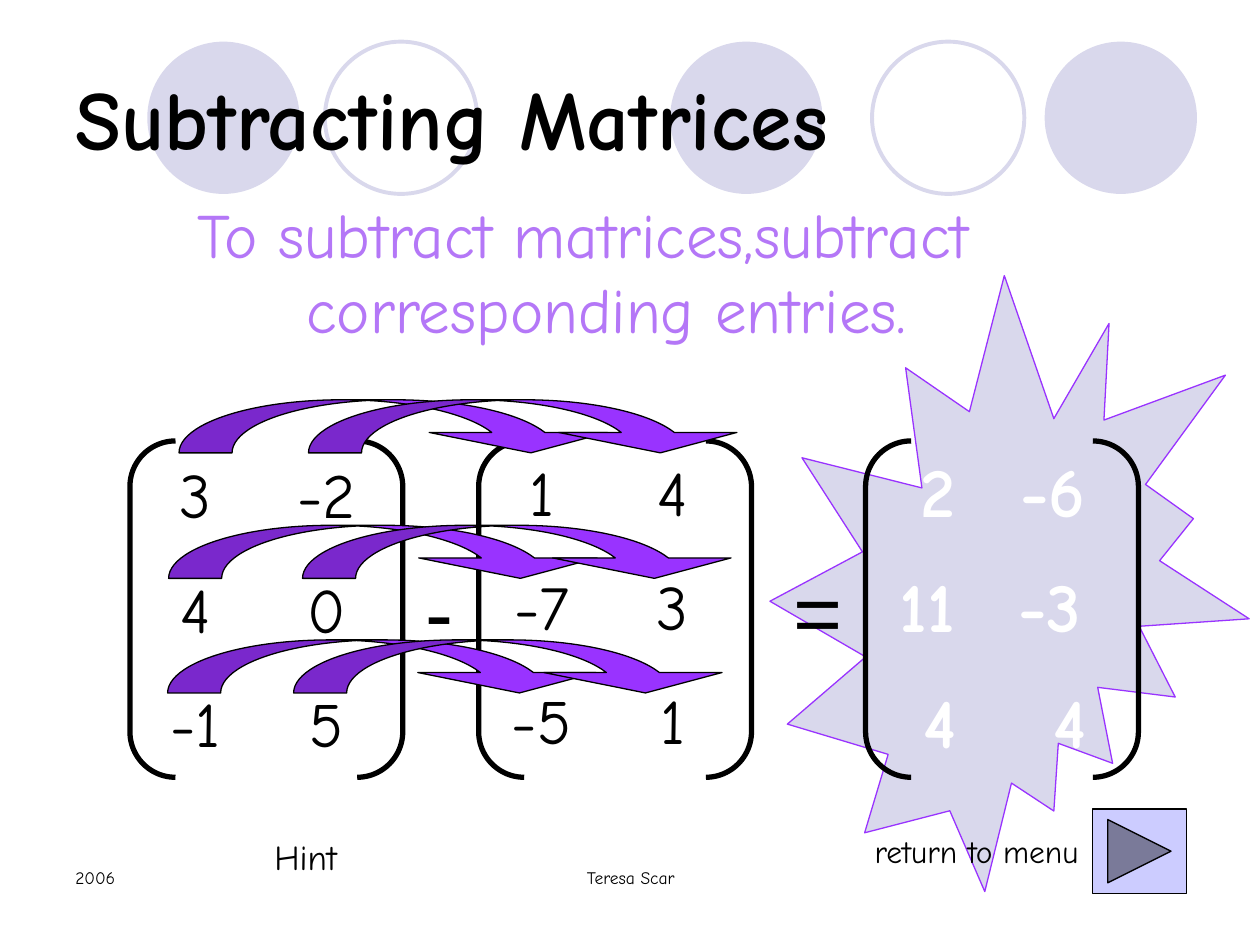
from lxml.etree import SubElement
from pptx import Presentation
from pptx.dml.color import RGBColor
from pptx.enum.shapes import MSO_SHAPE
from pptx.enum.text import MSO_ANCHOR, MSO_AUTO_SIZE, PP_ALIGN
from pptx.oxml.ns import qn
from pptx.util import Cm, Pt

BLACK = RGBColor(0, 0, 0)
WHITE = RGBColor(0xFF, 0xFF, 0xFF)
PALE = RGBColor(0xD9, 0xD8, 0xEC)
PURPLE = RGBColor(0x99, 0x33, 0xFF)
LILAC = RGBColor(0xB4, 0x77, 0xF7)
BUTTON = RGBColor(0xCC, 0xCC, 0xFF)
FONT = "Comic Neue"


def lengths(box):
    return [Cm(side) for side in box]


def write(frame, text, size, color=BLACK, bold=False, align=PP_ALIGN.CENTER, font=FONT):
    frame.text = text
    para = frame.paragraphs[0]
    para.alignment = align
    for run in para.runs:
        face = run.font
        face.name, face.size, face.bold = font, Pt(size), bold
        face.color.rgb = color


def add_label(slide, box, text, size, **style):
    frame = slide.shapes.add_textbox(*lengths(box)).text_frame
    frame.word_wrap = True
    write(frame, text, size, **style)
    return frame


def draw(slide, kind, box, fill=None, line=None, width=0.75):
    shape = slide.shapes.add_shape(kind, *lengths(box))
    shape.shadow.inherit = False
    if fill is None:
        shape.fill.background()
    else:
        shape.fill.solid()
        shape.fill.fore_color.rgb = fill
    if line is None:
        shape.line.fill.background()
    else:
        shape.line.color.rgb = line
        shape.line.width = Pt(width)
    return shape


def add_circles(slide, top, size):
    for left in (2.97, 13.51, 21.06):
        draw(slide, MSO_SHAPE.OVAL, (left, top, size, size), fill=PALE)
    for left in (6.55, 17.58):
        draw(slide, MSO_SHAPE.OVAL, (left, top, size, size), line=PALE, width=2.25)


def fill_holder(holder, box, text, size, **style):
    """Place a placeholder and bring it in front of what is drawn so far."""
    holder.left, holder.top, holder.width, holder.height = lengths(box)
    frame = holder.text_frame
    frame.auto_size = MSO_AUTO_SIZE.NONE
    write(frame, text, size, **style)
    holder.element.getparent().append(holder.element)
    return frame


def add_matrix(slide, box, rows):
    grid = slide.shapes.add_table(len(rows), len(rows[0]), *lengths(box)).table
    grid.first_row = grid.horz_banding = False
    for r, row in enumerate(rows):
        for c, entry in enumerate(row):
            cell = grid.cell(r, c)
            cell.fill.background()
            cell.vertical_anchor = MSO_ANCHOR.MIDDLE
            write(cell.text_frame, entry, 36)


def add_bracket(slide, box):
    pair = draw(slide, MSO_SHAPE.DOUBLE_BRACKET, box, line=BLACK, width=3)
    pair.adjustments[0] = 0.167


def add_arrow(slide, left, top):
    arrow = draw(slide, MSO_SHAPE.CURVED_DOWN_ARROW, (left, top, 8.89, 1.07), PURPLE, BLACK)
    for i, value in enumerate((1.68, 3.36, 0.385)):
        arrow.adjustments[i] = value


def add_answer(slide, left, top):
    """Entries as (row, x, width, left margin, text), x from the bracket."""
    entries = (
        (0, 0.41, 2.11, 0.25, "2"), (0, 2.49, 2.57, 0.25, "-6"),
        (1, -0.51, 3, 0.76, "11"), (1, 2.46, 2.51, 0.25, "-3"),
        (2, -0.51, 3.05, 1.2, "4"), (2, 3.07, 2.11, 0.25, "4"),
    )
    for row, x, width, margin, text in entries:
        box = (left + x, top + row * 2.33, width, 2.24)
        frame = add_label(slide, box, text, 40, color=WHITE, bold=True)
        frame.margin_left = Cm(margin)


def add_footer(slide, top):
    add_label(slide, (1.27, top, 5.92, 1.27), "2006", 10, align=PP_ALIGN.LEFT)
    add_label(slide, (8.69, top, 8.05, 1.27), "Teresa Scar", 10)


def add_menu(slide, left, top):
    add_label(slide, (left, top + 0.33, 6.55, 1.14), "return to menu", 18, align=PP_ALIGN.RIGHT)
    draw(slide, MSO_SHAPE.ACTION_BUTTON_FORWARD_OR_NEXT,
         (left + 6.58, top, 1.9, 1.7), BUTTON, BLACK)


def main():
    deck = Presentation()
    deck.slide_width, deck.slide_height = Cm(25.4), Cm(19.05)
    slide = deck.slides.add_slide(deck.slide_layouts[1])
    title, body = slide.placeholders

    add_circles(slide, 0.84, 3.07)
    add_footer(slide, 17.35)
    burst = draw(slide, MSO_SHAPE.EXPLOSION2, (15.09, 5.89, 10.8, 11.4), PALE, PURPLE)
    burst.rotation = 338.4
    fill_holder(title, (1.27, 0.76, 22.86, 3.18), "Subtracting Matrices", 48,
                bold=True, align=PP_ALIGN.LEFT)
    frame = fill_holder(body, (1.27, 3.81, 20.96, 4.88),
                        "To subtract matrices,subtract corresponding entries.", 36, color=LILAC)
    SubElement(frame.paragraphs[0]._p.get_or_add_pPr(), qn("a:buNone"))

    add_matrix(slide, (2.62, 8.89, 5.28, 6.92), (("3", "-2"), ("4", "0"), ("-1", "5")))
    add_matrix(slide, (9.6, 8.84, 5.28, 6.92), (("1", "4"), ("-7", "3"), ("-5", "1")))
    for left in (2.62, 9.65, 17.45):
        add_bracket(slide, (left, 8.89, 5.5, 6.78))
    for left, sign in ((8.33, "-"), (15.75, "=")):
        add_label(slide, (left, 11.15, 1.07, 2.29), sign, 48, font="Arial")
    add_answer(slide, 17.45, 8.89)
    for top, first, second in ((8.06, 3.61, 6.22), (10.59, 3.4, 6.1), (12.9, 3.38, 5.92)):
        add_arrow(slide, first, top)
        add_arrow(slide, second, top)

    add_menu(slide, 15.44, 16.31)
    add_label(slide, (5.28, 16.71, 2.11, 1.24), "Hint", 20, align=PP_ALIGN.LEFT)
    deck.save("out.pptx")


if __name__ == "__main__":
    main()
